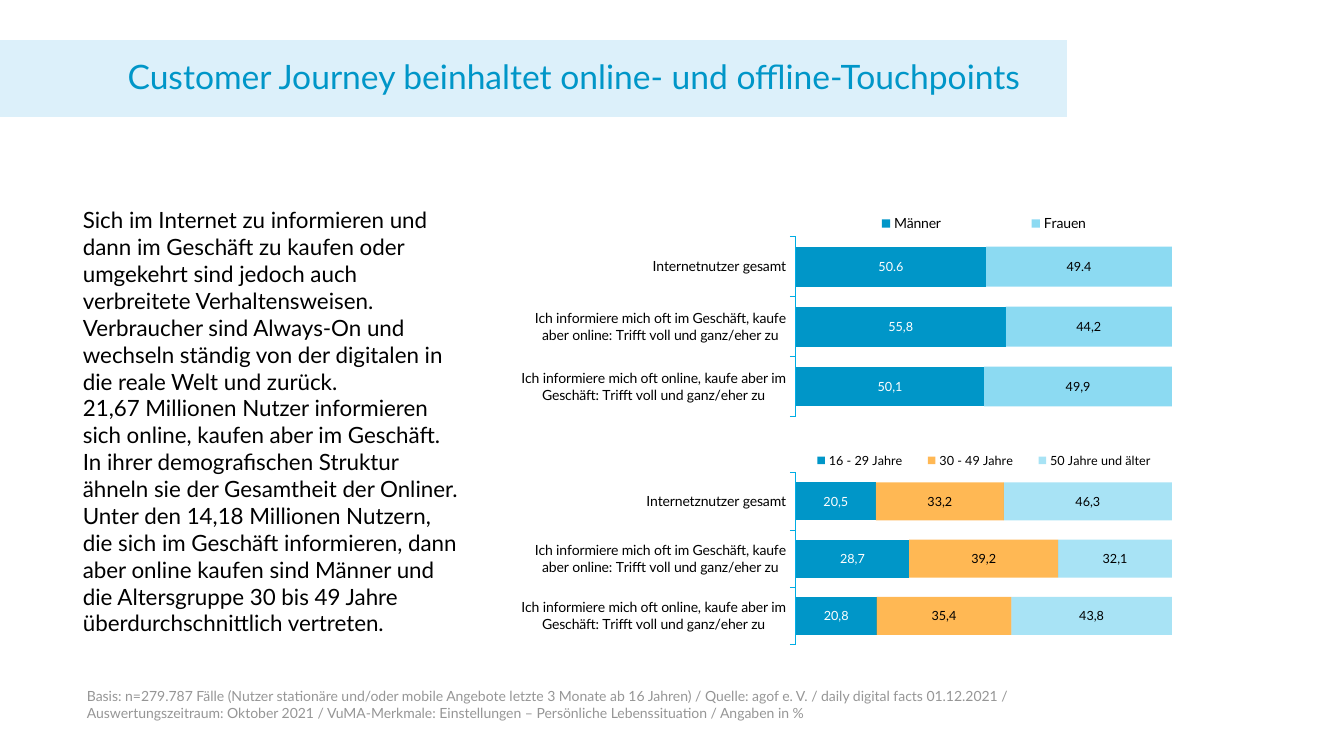
"""Build the customer journey slide with two stacked bar charts."""
from lxml import etree
from pptx import Presentation
from pptx.chart.data import CategoryChartData
from pptx.dml.color import RGBColor
from pptx.enum.chart import XL_CHART_TYPE, XL_LEGEND_POSITION, XL_TICK_LABEL_POSITION, XL_TICK_MARK
from pptx.enum.text import MSO_ANCHOR, MSO_AUTO_SIZE, PP_ALIGN
from pptx.oxml import parse_xml
from pptx.oxml.ns import nsdecls, qn
from pptx.util import Pt

STACKED = XL_CHART_TYPE.BAR_STACKED_100
LEGEND_TOP = XL_LEGEND_POSITION.TOP
TICK_OUT, TICK_NONE = XL_TICK_MARK.OUTSIDE, XL_TICK_MARK.NONE
LABELS_LOW = XL_TICK_LABEL_POSITION.LOW
MIDDLE, TOP = MSO_ANCHOR.MIDDLE, MSO_ANCHOR.TOP
NO_AUTOFIT = MSO_AUTO_SIZE.NONE
RIGHT = PP_ALIGN.RIGHT

PX = 12192000 / 1344
FONT = "Lato"
COLORS = {
    "text": "000000", "label": "FFFFFF", "source": "969696", "band": "DCF0FA",
    "blue": "0096C8", "cyan": "00ADE4", "orange": "FF9600",
}


def style(font, size, color):
    font.name = FONT
    font.size = Pt(size)
    font.color.rgb = RGBColor.from_string(COLORS[color])


def place(parent, index, x, y, w, h, target=""):
    for old in parent.findall(qn("c:layout")):
        parent.remove(old)
    parent.insert(index, parse_xml(
        f'<c:layout {nsdecls("c")}><c:manualLayout>{target}'
        '<c:xMode val="edge"/><c:yMode val="edge"/>'
        f'<c:x val="{x}"/><c:y val="{y}"/><c:w val="{w}"/><c:h val="{h}"/>'
        '</c:manualLayout></c:layout>'))


prs = Presentation()
prs.slide_width, prs.slide_height = round(1344 * PX), round(756 * PX)
slide = prs.slides.add_slide(prs.slide_layouts[5])

title = slide.shapes.title
title.left, title.top, title.width, title.height = (round(v * PX) for v in (-136, 40, 1203, 77))
title._element.spPr.append(parse_xml(
    f'<a:prstGeom {nsdecls("a")} prst="roundRect"><a:avLst>'
    '<a:gd name="adj" fmla="val 50000"/></a:avLst></a:prstGeom>'))
title.fill.solid()
title.fill.fore_color.rgb = RGBColor.from_string(COLORS["band"])
heading = title.text_frame
heading.text = "Customer Journey beinhaltet online- und offline-Touchpoints"
heading.auto_size = NO_AUTOFIT
heading.vertical_anchor = MIDDLE
heading.margin_right = round(47 * PX)
heading.paragraphs[0].alignment = RIGHT
heading.paragraphs[0].line_spacing = 0.9
style(heading.paragraphs[0].font, 24, "blue")

findings = (
    "Sich im Internet zu informieren und dann im Geschäft zu kaufen oder umgekehrt sind "
    "jedoch auch verbreitete Verhaltensweisen. Verbraucher sind Always-On und wechseln "
    "ständig von der digitalen in die reale Welt und zurück.\v"
    "21,67 Millionen Nutzer informieren sich online, kaufen aber im Geschäft. In ihrer "
    "demografischen Struktur ähneln sie der Gesamtheit der Onliner. Unter den 14,18 "
    "Millionen Nutzern, die sich im Geschäft informieren, dann aber online kaufen sind "
    "Männer und die Altersgruppe 30 bis 49 Jahre überdurchschnittlich vertreten.")
source = (
    "Basis: n=279.787 Fälle (Nutzer stationäre und/oder mobile Angebote letzte 3 Monate ab "
    "16 Jahren) / Quelle: agof e. V. / daily digital facts 01.12.2021 / "
    "Auswertungszeitraum: Oktober 2021 / VuMA-Merkmale: Einstellungen – Persönliche "
    "Lebenssituation / Angaben in %")
for wording, box, anchor, size, color in (
    (findings, (73, 197, 397, 449), MIDDLE, 16, "text"),
    (source, (77, 683, 950, 40), TOP, 10, "source"),
):
    frame = slide.shapes.add_textbox(*(round(v * PX) for v in box)).text_frame
    frame.word_wrap = True
    frame.vertical_anchor = anchor
    frame.text = wording
    style(frame.paragraphs[0].font, size, color)

habits = [
    "Ich informiere mich oft im Geschäft, kaufe aber online: Trifft voll und ganz/eher zu",
    "Ich informiere mich oft online, kaufe aber im Geschäft: Trifft voll und ganz/eher zu",
]
gender = [
    ("Männer", (50.6, 55.8, 50.1), (None, "55,8", "50,1"), "blue", 100, "label"),
    ("Frauen", (49.4, 44.2, 49.9), (None, "44,2", "49,9"), "cyan", 45, "text"),
]
age = [
    ("16 - 29 Jahre", (21.3, 30.1, 21.5), ("20,5", "28,7", "20,8"), "blue", 100, "label"),
    ("30 - 49 Jahre", (34, 39.6, 35.8), ("33,2", "39,2", "35,4"), "orange", 67, "text"),
    ("50 Jahre und älter", (44.7, 30.2, 42.7), ("46,3", "32,1", "43,8"), "cyan", 34, "text"),
]

for total, groups, top, height, legend_size in (
    ("Internetnutzer gesamt", gender, 196, 221, 10),
    ("Internetznutzer gesamt", age, 434, 211, 9),
):
    data = CategoryChartData(number_format="0.0")
    data.categories = [total] + habits
    for name, values, *_ in groups:
        data.add_series(name, values)
    box = (round(v * PX) for v in (519, top, 653, height))
    chart = slide.shapes.add_chart(STACKED, *box, data).chart
    style(chart.font, 9, "text")
    chart.has_title = False

    chart.has_legend = True
    chart.legend.position = LEGEND_TOP
    chart.legend.include_in_layout = False
    style(chart.legend.font, legend_size, "text")
    place(chart.legend._element, 1, 0.424, 0.06, 0.576, 0.13)
    place(chart._chartSpace.chart.plotArea, 0, 0.424, 0.185, 0.576, 0.815,
          '<c:layoutTarget val="inner"/>')

    habit_axis = chart.category_axis
    habit_axis.reverse_order = True
    habit_axis.major_tick_mark = TICK_OUT
    habit_axis.minor_tick_mark = TICK_NONE
    habit_axis.tick_label_position = LABELS_LOW
    habit_axis.format.line.color.rgb = RGBColor.from_string(COLORS["cyan"])
    habit_axis.format.line.width = Pt(0.75)
    style(habit_axis.tick_labels.font, 10, "text")
    chart.value_axis.has_major_gridlines = False
    chart.value_axis.visible = False

    plot = chart.plots[0]
    plot.gap_width, plot.overlap = 50, 100
    plot.vary_by_categories = False
    for series, (_, _, shares, color, opacity, label_color) in zip(plot.series, groups):
        fill = series.format.fill
        fill.solid()
        fill.fore_color.rgb = RGBColor.from_string(COLORS[color])
        if opacity < 100:
            tint = series._element.spPr.find(".//" + qn("a:srgbClr"))
            etree.SubElement(tint, qn("a:alpha")).set("val", str(opacity * 1000))
        labels = series.data_labels
        labels.show_value = True
        labels.number_format = "0.0"
        labels.number_format_is_linked = False
        style(labels.font, 9, label_color)
        for index, share in enumerate(shares):
            if share:
                paragraph = series.points[index].data_label.text_frame.paragraphs[0]
                run = paragraph.add_run()
                run.text = share
                style(run.font, 9, label_color)

prs.save("out.pptx")
